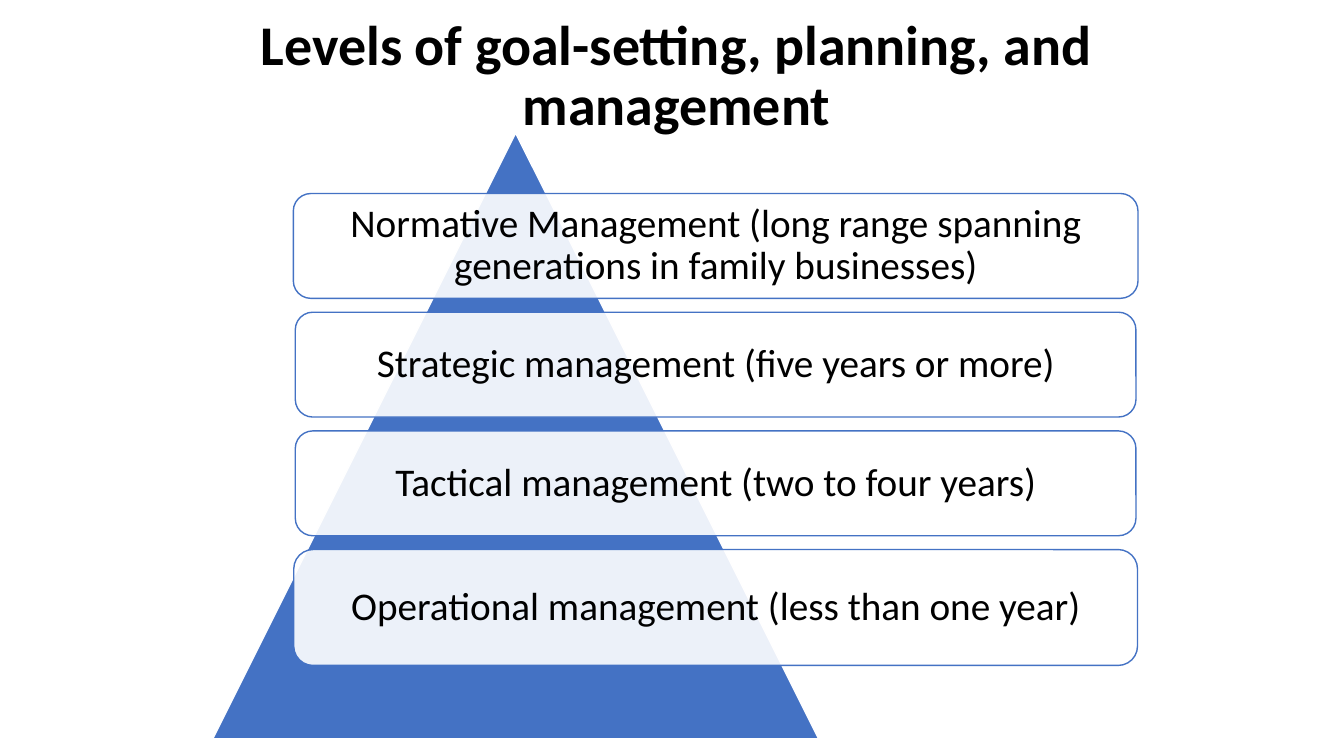
import pptx
import pptx.util
import pptx.dml.color
import pptx.enum.shapes
import pptx.enum.text
import pptx.oxml
import pptx.oxml.ns
import lxml.etree

COLORS = {"blue": "4472C4", "white": "FFFFFF", "black": "000000"}
KINDS = pptx.enum.shapes.MSO_SHAPE
LEVELS = [
    ("Normative Management (long range spanning generations in family businesses)", 62.85, 13.87),
    ("Strategic management (five years or more)", 62.55, 13.87),
    ("Tactical management (two to four years)", 62.55, 13.87),
    ("Operational management (less than one year)", 62.78, 15.33),
]
MIDDLE, TOP, PITCH = 53.25, 25.6, 15.7


class Board:
    font = "Calibri"

    def __init__(self, deck):
        self.wide = deck.slide_width
        self.high = deck.slide_height
        self.slide = deck.slides.add_slide(deck.slide_layouts[6])

    def place(self, left, top, width, height):
        return (int(left * self.wide / 100), int(top * self.high / 100),
                int(width * self.wide / 100), int(height * self.high / 100))

    def color(self, name):
        return pptx.dml.color.RGBColor.from_string(COLORS[name])

    def shape(self, kind, area, fill, line, alpha=None):
        shape = self.slide.shapes.add_shape(kind, *self.place(*area))
        shape.shadow.inherit = False
        shape.fill.solid()
        shape.fill.fore_color.rgb = self.color(fill)
        shape.line.color.rgb = self.color(line)
        shape.line.width = pptx.util.Pt(1)
        if alpha:
            tint = shape.fill._xPr.find(".//" + pptx.oxml.ns.qn("a:srgbClr"))
            lxml.etree.SubElement(tint, pptx.oxml.ns.qn("a:alpha"), val=str(alpha * 1000))
        return shape

    def label(self, shape, text, size, inset, bold=False):
        frame = shape.text_frame
        frame.text = text
        frame.word_wrap = True
        frame.vertical_anchor = pptx.enum.text.MSO_ANCHOR.MIDDLE
        frame.margin_left = frame.margin_right = pptx.util.Inches(inset)
        frame.margin_top = frame.margin_bottom = pptx.util.Inches(inset)
        for para in frame.paragraphs:
            para.alignment = pptx.enum.text.PP_ALIGN.CENTER
            para.line_spacing = 0.9
            for run in para.runs:
                run.font.name = self.font
                run.font.size = pptx.util.Pt(size)
                run.font.bold = bold
                run.font.color.rgb = self.color("black")

    def title(self, text, area):
        box = self.slide.shapes.add_textbox(*self.place(*area))
        self.label(box, text, 40, 0.05, bold=True)

    def level(self, text, area):
        box = self.shape(KINDS.ROUNDED_RECTANGLE, area, "white", "blue", alpha=90)
        self.label(box, text, 28, 0.12)


def main():
    deck = pptx.Presentation()
    deck.slide_width = pptx.util.Inches(13.33)
    deck.slide_height = pptx.util.Inches(7.5)
    board = Board(deck)
    board.shape(KINDS.ISOSCELES_TRIANGLE, (15.83, 17.6, 45.08, 80.13), "blue", "white")
    for row, (text, width, height) in enumerate(LEVELS):
        board.level(text, (MIDDLE - width / 2, TOP + row * PITCH, width, height))
    board.title("Levels of goal-setting, planning, and management", (15.6, 2.8, 69.45, 14.8))
    deck.save("out.pptx")


if __name__ == "__main__":
    main()
